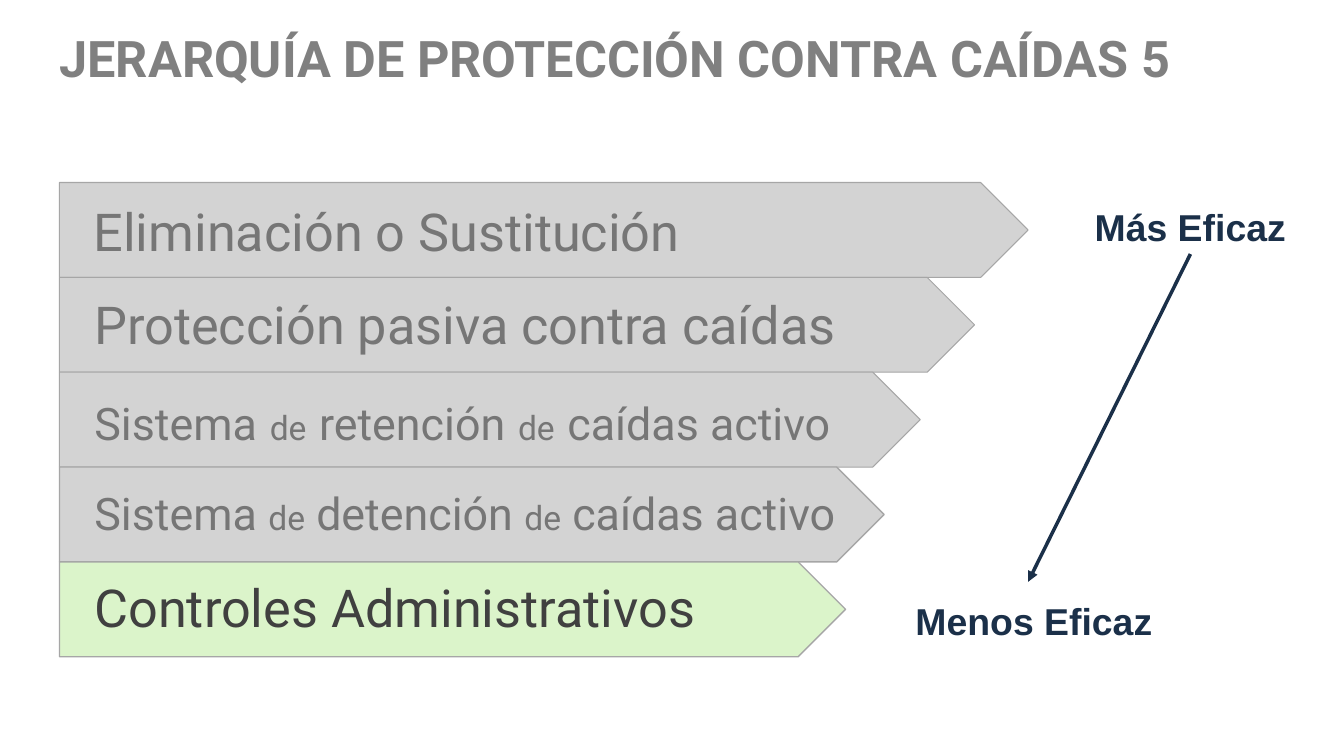
from dataclasses import dataclass

from lxml.etree import SubElement
from pptx import Presentation
from pptx.dml.color import RGBColor
from pptx.enum.shapes import MSO_CONNECTOR as Connector, MSO_SHAPE as Preset
from pptx.enum.text import MSO_ANCHOR as Anchor, MSO_AUTO_SIZE as AutoSize, PP_ALIGN as Align
from pptx.oxml.ns import qn
from pptx.shapes.autoshape import Shape
from pptx.slide import Slide
from pptx.text.text import Font
from pptx.util import Cm, Pt

COLORS = {
    "title": "808080",
    "band": "D3D3D3",
    "highlight": "DBF4CA",
    "outline": "A6A6A6",
    "muted": "767676",
    "strong": "404040",
    "navy": "1B3049",
}
BAND_LEFT, BAND_TOP, BAND_HEIGHT = 1.5, 4.6, 2.39


@dataclass(frozen=True)
class Phrase:
    text: str
    size: float


@dataclass(frozen=True)
class Level:
    phrases: tuple[Phrase, ...]
    band_width: float
    label_left: float
    label_top: float
    label_width: float
    label_height: float = 1.85
    outline_width: float = 0.75
    fill: str = "band"
    text_color: str = "muted"


@dataclass(frozen=True)
class Caption:
    text: str
    left: float
    top: float
    width: float
    height: float = 1.37


GAP, SMALL_DE = Phrase(" ", 36), Phrase("de", 24)

LEVELS = (
    Level((Phrase("Eliminación o Sustitución", 37.3),), 24.41, 2.11, 4.9, 15.42),
    Level((Phrase("Protección pasiva contra caídas", 37.3),), 23.06, 2.13, 7.24, 19.28),
    Level(
        (Phrase("Sistema", 32), GAP, SMALL_DE, GAP, Phrase("retención", 32),
         GAP, SMALL_DE, GAP, Phrase("caídas activo", 32)),
        21.69, 2.13, 9.7, 19.46, label_height=1.8,
    ),
    Level(
        (Phrase("Sistema ", 32), SMALL_DE, Phrase(" detención ", 32),
         SMALL_DE, Phrase(" caídas activo", 32)),
        20.78, 2.13, 12.12, 19.46, label_height=1.63, outline_width=1,
    ),
    Level(
        (Phrase("Controles Administrativos", 37.3),), 19.81, 2.13, 14.38, 15.67,
        outline_width=1, fill="highlight", text_color="strong",
    ),
)
MOST = Caption("Más Eficaz", 26.34, 5.03, 7.32)
LEAST = Caption("Menos Eficaz", 21.46, 14.96, 9.2)


def color(name: str) -> RGBColor:
    return RGBColor.from_string(COLORS[name])


def style(font: Font, family: str, size: float, color_name: str, bold: bool = False) -> None:
    font.name = family
    font.size = Pt(size)
    font.bold = bold
    font.color.rgb = color(color_name)


def write_title(slide: Slide, text: str) -> None:
    title = slide.shapes.title
    title.left, title.top, title.width, title.height = Cm(1.5), Cm(1.22), Cm(33.86), Cm(1.24)
    frame = title.text_frame
    frame.text = text
    frame.auto_size = AutoSize.NONE
    frame.vertical_anchor = Anchor.MIDDLE
    frame.margin_left = frame.margin_right = frame.margin_top = 0
    frame.margin_bottom = Cm(0.8)
    heading = frame.paragraphs[0]
    heading.alignment = Align.LEFT
    style(heading.runs[0].font, "Roboto", 36, "title", bold=True)


def draw_band(slide: Slide, level: Level, rank: int) -> None:
    band = slide.shapes.add_shape(
        Preset.PENTAGON, Cm(BAND_LEFT), Cm(BAND_TOP + rank * BAND_HEIGHT),
        Cm(level.band_width), Cm(BAND_HEIGHT),
    )
    band.shadow.inherit = False
    band.fill.solid()
    band.fill.fore_color.rgb = color(level.fill)
    band.line.color.rgb = color("outline")
    band.line.width = Pt(level.outline_width)


def write_label(slide: Slide, level: Level) -> None:
    label = slide.shapes.add_textbox(
        Cm(level.label_left), Cm(level.label_top), Cm(level.label_width), Cm(level.label_height)
    )
    frame = label.text_frame
    frame.word_wrap = False
    frame.auto_size = AutoSize.SHAPE_TO_FIT_TEXT
    for phrase in level.phrases:
        run = frame.paragraphs[0].add_run()
        run.text = phrase.text
        style(run.font, "Roboto", phrase.size, level.text_color)


def write_caption(slide: Slide, caption: Caption) -> Shape:
    box = slide.shapes.add_textbox(
        Cm(caption.left), Cm(caption.top), Cm(caption.width), Cm(caption.height)
    )
    frame = box.text_frame
    frame.text = caption.text
    frame.word_wrap = True
    frame.vertical_anchor = Anchor.MIDDLE
    paragraph = frame.paragraphs[0]
    paragraph.alignment = Align.CENTER
    style(paragraph.runs[0].font, "Arial", 26.7, "navy", bold=True)
    return box


def draw_arrow(slide: Slide, source: Shape, end_x: float, end_y: float) -> None:
    arrow = slide.shapes.add_connector(
        Connector.STRAIGHT, source.left + source.width // 2, source.top + source.height,
        Cm(end_x), Cm(end_y),
    )
    arrow.begin_connect(source, 2)
    arrow.line.color.rgb = color("navy")
    arrow.line.width = Pt(2.5)
    properties = arrow._element.spPr
    SubElement(properties.find(qn("a:ln")), qn("a:tailEnd"), type="triangle")
    SubElement(properties, qn("a:effectLst"))


def main() -> None:
    deck = Presentation()
    deck.slide_width, deck.slide_height = Cm(33.87), Cm(19.05)
    slide = deck.slides.add_slide(deck.slide_layouts[5])
    write_title(slide, "JERARQUÍA DE PROTECCIÓN CONTRA CAÍDAS 5")
    for rank, level in enumerate(LEVELS):
        draw_band(slide, level, rank)
        write_label(slide, level)
    most_effective = write_caption(slide, MOST)
    write_caption(slide, LEAST)
    draw_arrow(slide, most_effective, 25.91, 14.66)
    deck.save("out.pptx")


if __name__ == "__main__":
    main()
